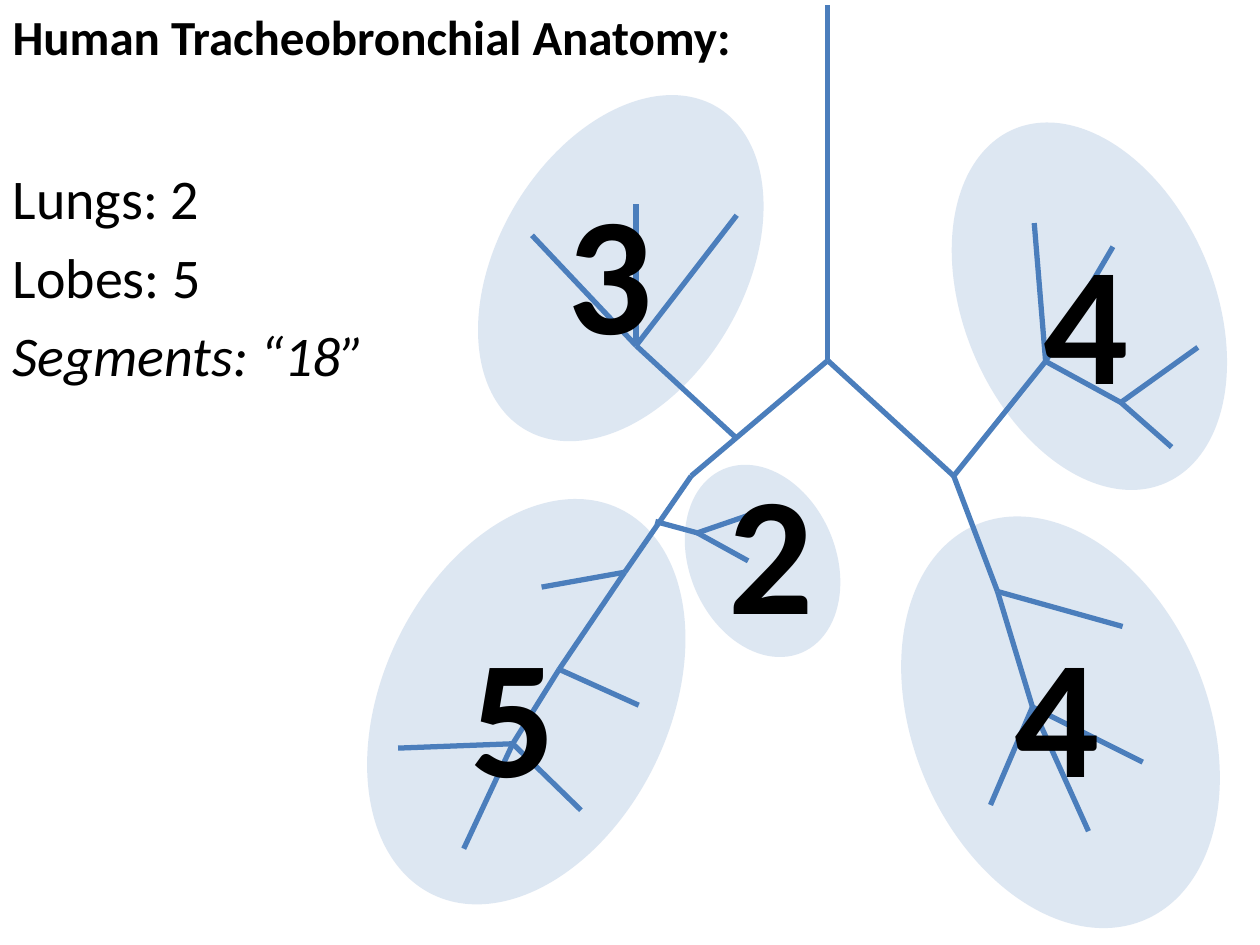
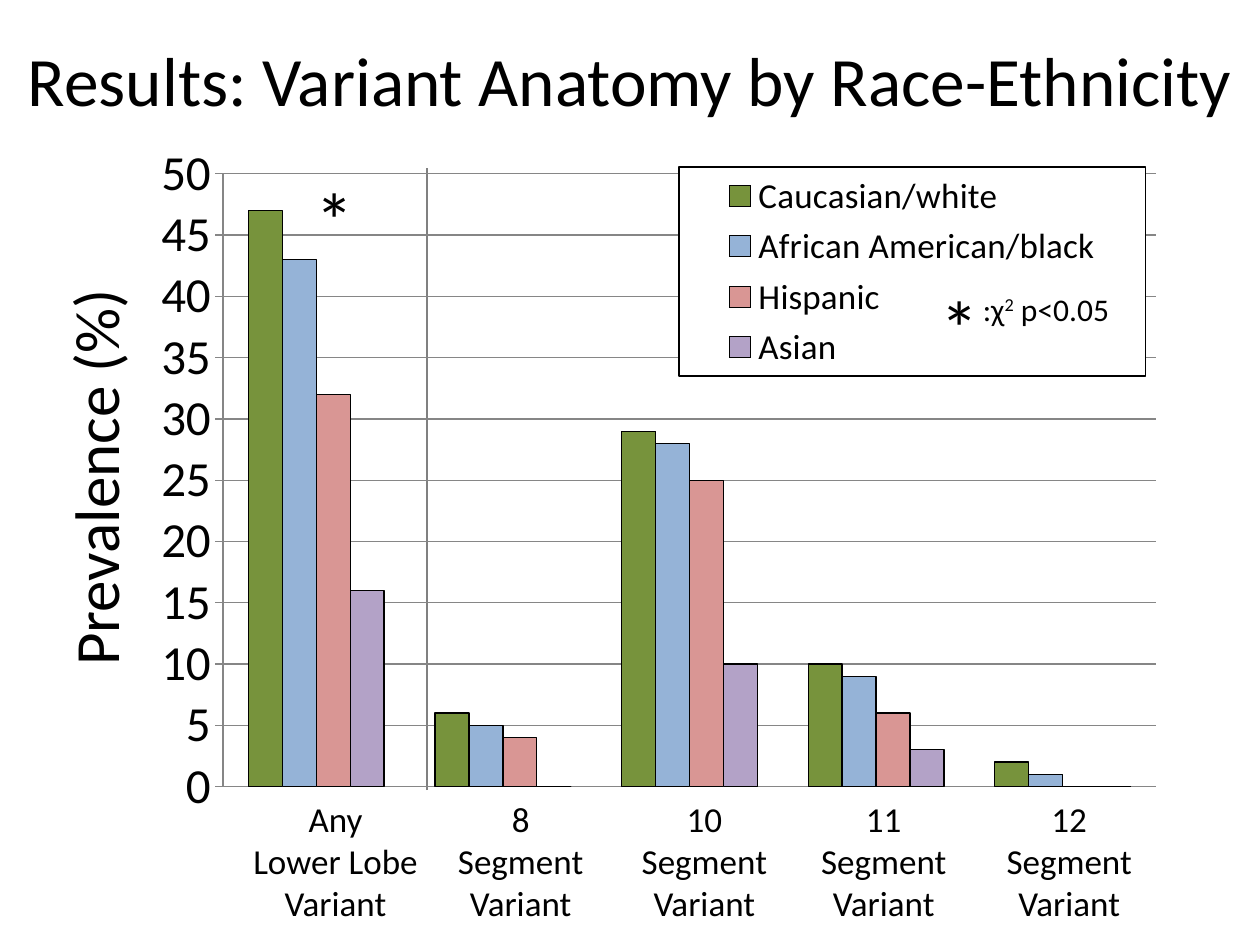
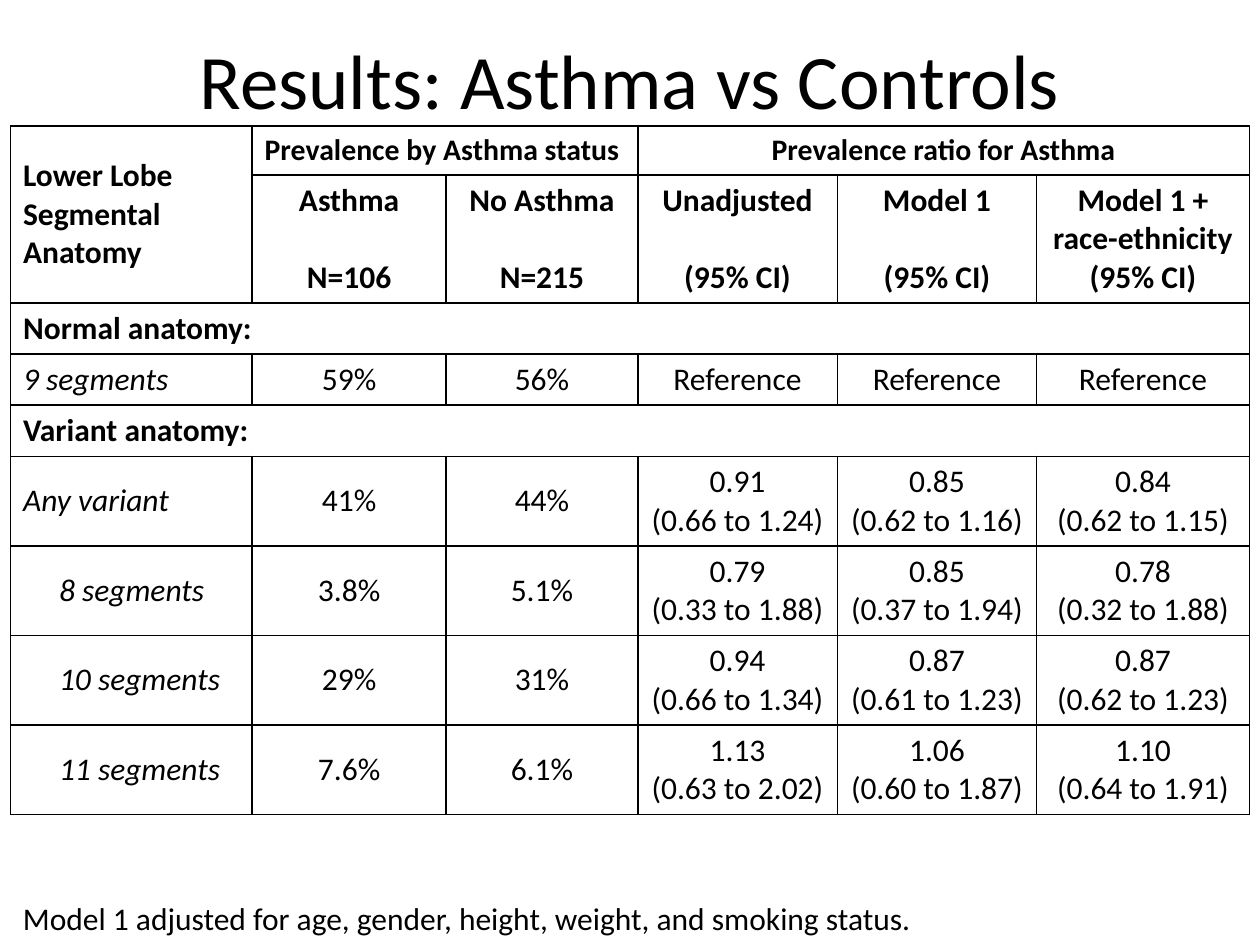
"""Build three slides on tracheobronchial anatomy and its variants."""
import lxml.etree
import pptx
import pptx.chart.data
import pptx.dml.color
import pptx.enum.chart
import pptx.enum.shapes
import pptx.enum.text
import pptx.oxml
import pptx.oxml.ns
import pptx.util

Pt = pptx.util.Pt
qn = pptx.oxml.ns.qn
ALIGN = pptx.enum.text.PP_ALIGN
ANCHOR = pptx.enum.text.MSO_ANCHOR

FONT = "Calibri"
COLORS = {
    "text": "000000", "lobe": "4F81BD", "airway": "4B7EBC", "grid": "868686",
    "divider": "808080", "paper": "FFFFFF", "white": "77933C", "black": "95B3D7",
    "hispanic": "D99694", "asian": "B3A2C7",
}
LOBE_ALPHA = 19

COUNTS = [("Lungs: 2", False), ("Lobes: 5", False), ("Segments: “18”", True)]
LOBES = [
    (284.5, 46, 140.5, 214.5, 30.8),
    (551, 65, 143, 220, 336.9),
    (219, 278.5, 163.5, 245, 25.9),
    (394, 263.5, 83.5, 114, 336.9),
    (522, 290, 168, 245.5, 336.9),
]
LOBE_NUMBERS = [("3", 317.5, 91.5), ("2", 409.5, 251.5), ("5", 262, 345),
                ("4", 589, 120), ("4", 572.5, 345)]
JUNCTIONS = {
    "trachea": (473, 3), "carina": (473, 206),
    "right upper origin": (421, 250.5), "right upper": (363.5, 197.5),
    "right bend": (395, 272), "middle origin": (374.5, 298), "middle": (398.5, 304.5),
    "right lower": (357, 327), "right basal": (319.5, 382.5), "right end": (293, 425),
    "left main": (545, 272), "left upper": (597.5, 206.5), "lingula": (640.5, 230),
    "left lower": (570, 338), "left basal": (590, 404),
}
BRANCHES = {
    "trachea": ["carina"],
    "carina": ["right bend", "left main"],
    "right upper origin": ["right upper"],
    "right upper": [(421, 123), (363.5, 116.5), (304, 134.5)],
    "right bend": ["right lower"],
    "middle origin": ["middle"],
    "middle": [(433.5, 292.5), (427.5, 320.5)],
    "right lower": [(309.5, 335.5), "right basal"],
    "right basal": [(365, 403), "right end"],
    "right end": [(227.5, 427.5), (265, 485), (332, 463)],
    "left main": ["left upper", "left lower"],
    "left upper": [(636, 141), (591, 127.5), "lingula"],
    "lingula": [(684.5, 198.5), (669.5, 255.5)],
    "left lower": [(641.5, 358), "left basal"],
    "left basal": [(566, 460), (622, 475), (653, 435.5)],
}

CATEGORIES = ["1", "2", "3", "4", "5"]
SERIES = [
    ("Caucasian/white", [47, 6, 29, 10, 2], "white"),
    ("African American/black", [43, 5, 28, 9, 1], "black"),
    ("Hispanic", [32, 4, 25, 6, 0], "hispanic"),
    ("Asian", [16, 0, 10, 3, 0], "asian"),
]
CATEGORY_LABELS = [
    ("Any\nLower Lobe\nVariant", 137, 109.5),
    ("8\nSegment\nVariant", 254, 87),
    ("10\nSegment\nVariant", 359, 87),
    ("11\nSegment\nVariant", 461.5, 87),
    ("12\nSegment\nVariant", 567.5, 87),
]
PLOT_AREA = (0.08, 0.06, 0.9, 0.88)
LEGEND_AREA = (0.52, 0.05, 0.45, 0.3)

COLUMN_WIDTHS = [138, 111, 109.5, 114, 114, 121.5]
ROW_HEIGHTS = [24.5, 64, 26, 26, 26, 44.5, 44.5, 44.5, 44.5]
MERGES = [((0, 0), (1, 0)), ((0, 1), (0, 2)), ((0, 3), (0, 5)),
          ((2, 0), (2, 5)), ((4, 0), (4, 5))]
HEADER_ROWS = 2
SUBGROUP_START = 6
TABLE = [
    ["Lower Lobe Segmental Anatomy", "Prevalence by Asthma status", "",
     "Prevalence ratio for Asthma", "", ""],
    ["", "Asthma\nN=106", "No Asthma\nN=215", "Unadjusted\n(95% CI)",
     "Model 1\n(95% CI)", "Model 1 + race-ethnicity\n(95% CI)"],
    ["Normal anatomy:"],
    ["9 segments", "59%", "56%", "Reference", "Reference", "Reference"],
    ["Variant anatomy:"],
    ["Any variant", "41%", "44%", "0.91\n(0.66 to 1.24)",
     "0.85\n(0.62 to 1.16)", "0.84\n(0.62 to 1.15)"],
    ["8 segments", "3.8%", "5.1%", "0.79\n(0.33 to 1.88)",
     "0.85\n(0.37 to 1.94)", "0.78\n(0.32 to 1.88)"],
    ["10 segments", "29%", "31%", "0.94\n(0.66 to 1.34)",
     "0.87\n(0.61 to 1.23)", "0.87\n(0.62 to 1.23)"],
    ["11 segments", "7.6%", "6.1%", "1.13\n(0.63 to 2.02)",
     "1.06\n(0.60 to 1.87)", "1.10\n(0.64 to 1.91)"],
]


def rgb(name):
    return pptx.dml.color.RGBColor.from_string(COLORS[name])


def style_font(font, size, bold=False, italic=False):
    font.name, font.size, font.bold, font.italic = FONT, Pt(size), bold, italic
    font.color.rgb = rgb("text")


def write_text(frame, text, size=18, bold=False, italic=False, align=ALIGN.LEFT, last_gap=0):
    """Write one paragraph per line; text between carets is superscript."""
    lines = text.split("\n")
    for number, line in enumerate(lines):
        paragraph = frame.add_paragraph() if number else frame.paragraphs[0]
        paragraph.alignment = align
        for position, piece in enumerate(line.split("^")):
            run = paragraph.add_run()
            run.text = piece
            style_font(run.font, size, bold, italic)
            if position % 2:
                run.font._element.set("baseline", "30000")
    if last_gap:
        paragraph.space_before = Pt(last_gap)


def place(shape, left, top, width, height):
    shape.left, shape.top, shape.width, shape.height = map(Pt, (left, top, width, height))


def add_label(slide, text, box, **text_format):
    shape = slide.shapes.add_textbox(*map(Pt, box))
    shape.text_frame.word_wrap = False
    shape.text_frame.auto_size = pptx.enum.text.MSO_AUTO_SIZE.SHAPE_TO_FIT_TEXT
    write_text(shape.text_frame, text, **text_format)
    return shape


def set_title(slide, text, box, **text_format):
    title = slide.shapes.title
    place(title, *box)
    title.text_frame.auto_size = pptx.enum.text.MSO_AUTO_SIZE.NONE
    title.text_frame.vertical_anchor = ANCHOR.MIDDLE
    write_text(title.text_frame, text, **text_format)


def add_line(slide, start, end, color, width):
    line = slide.shapes.add_connector(
        pptx.enum.shapes.MSO_CONNECTOR.STRAIGHT, *map(Pt, (*start, *end)))
    line.line.color.rgb = rgb(color)
    line.line.width = Pt(width)
    lxml.etree.SubElement(line._element.spPr, qn("a:effectLst"))


def add_lobe(slide, left, top, width, height, rotation):
    lobe = slide.shapes.add_shape(
        pptx.enum.shapes.MSO_SHAPE.OVAL, *map(Pt, (left, top, width, height)))
    lobe.rotation = rotation
    lobe.shadow.inherit = False
    lobe.line.fill.background()
    lobe.fill.solid()
    lobe.fill.fore_color.rgb = rgb("lobe")
    color = lobe._element.spPr.find(".//" + qn("a:srgbClr"))
    lxml.etree.SubElement(color, qn("a:alpha"), val=str(LOBE_ALPHA * 1000))


def build_anatomy(presentation):
    slide = presentation.slides.add_slide(presentation.slide_layouts[1])
    set_title(slide, "Human Tracheobronchial Anatomy:", (0, 0, 430, 41), size=28, bold=True)

    body = slide.placeholders[1]
    place(body, 0, 90, 217.5, 140)
    frame = body.text_frame
    frame.auto_size = pptx.enum.text.MSO_AUTO_SIZE.NONE
    write_text(frame, "\n".join(text for text, _ in COUNTS), size=32)
    for paragraph, (_, italic) in zip(frame.paragraphs, COUNTS):
        paragraph.space_before, paragraph.space_after = Pt(0), Pt(6.5)
        paragraph.runs[0].font.italic = italic
        properties = paragraph._element.get_or_add_pPr()
        properties.set("marL", "0")
        properties.set("indent", "0")
        lxml.etree.SubElement(properties, qn("a:buNone"))

    for lobe in LOBES:
        add_lobe(slide, *lobe)
    for start, ends in BRANCHES.items():
        for end in ends:
            add_line(slide, JUNCTIONS[start], JUNCTIONS.get(end, end), "airway", 3)
    for number, left, top in LOBE_NUMBERS:
        add_label(slide, number, (left, top, 63.5, 124), size=96, bold=True)


def manual_layout(area, inner=False):
    layout = lxml.etree.Element(qn("c:layout"))
    manual = lxml.etree.SubElement(layout, qn("c:manualLayout"))
    settings = [("layoutTarget", "inner")] if inner else []
    settings += [("xMode", "edge"), ("yMode", "edge"), *zip("xywh", area)]
    for name, value in settings:
        lxml.etree.SubElement(manual, qn("c:" + name), val=str(value))
    return layout


def style_legend(chart):
    chart.has_legend = True
    style_font(chart.legend.font, 20)
    element = chart.legend._element
    for child in list(element):
        if child.tag != qn("c:txPr"):
            element.remove(child)
    box = pptx.oxml.parse_xml(
        f'<c:spPr {pptx.oxml.ns.nsdecls("c", "a")}>'
        f'<a:solidFill><a:srgbClr val="{COLORS["paper"]}"/></a:solidFill>'
        f'<a:ln w="9525"><a:solidFill><a:srgbClr val="{COLORS["text"]}"/></a:solidFill></a:ln>'
        '</c:spPr>')
    element[:0] = [
        lxml.etree.Element(qn("c:legendPos"), val="r"),
        manual_layout(LEGEND_AREA),
        lxml.etree.Element(qn("c:overlay"), val="1"),
        box,
    ]


def add_prevalence_chart(slide):
    data = pptx.chart.data.CategoryChartData()
    data.categories = CATEGORIES
    for name, values, _ in SERIES:
        data.add_series(name, values)
    chart = slide.shapes.add_chart(
        pptx.enum.chart.XL_CHART_TYPE.COLUMN_CLUSTERED,
        *map(Pt, (80, 75.5, 592.5, 398)), data).chart
    style_font(chart.font, 10)
    chart.has_title = False

    plot = chart.plots[0]
    plot.vary_by_categories = False
    plot.gap_width, plot.overlap = 150, 0
    for series, (_, _, color) in zip(plot.series, SERIES):
        series.invert_if_negative = False
        series.format.fill.solid()
        series.format.fill.fore_color.rgb = rgb(color)
        series.format.line.color.rgb = rgb("text")
        series.format.line.width = Pt(0.75)

    chart.category_axis.visible = False
    axis = chart.value_axis
    axis.minimum_scale, axis.maximum_scale, axis.major_unit = 0, 50, 5
    axis.major_tick_mark = pptx.enum.chart.XL_TICK_MARK.CROSS
    axis.has_major_gridlines = True
    style_font(axis.tick_labels.font, 28)
    for line in (axis.format.line, axis.major_gridlines.format.line):
        line.color.rgb = rgb("grid")
        line.width = Pt(0.75)

    style_legend(chart)
    plot_area = chart._chartSpace.find(".//" + qn("c:plotArea"))
    for layout in plot_area.findall(qn("c:layout")):
        plot_area.remove(layout)
    plot_area.insert(0, manual_layout(PLOT_AREA, inner=True))


def build_race_results(presentation):
    slide = presentation.slides.add_slide(presentation.slide_layouts[5])
    set_title(slide, "Results: Variant Anatomy by Race-Ethnicity", (0, 0, 720, 90),
              size=39.6, align=ALIGN.CENTER)
    for text, left, width in CATEGORY_LABELS:
        add_label(slide, text, (left, 452, width, 80), size=20, align=ALIGN.CENTER)
    axis_title = add_label(slide, "Prevalence (%)", (-62, 246, 232, 51), size=36)
    axis_title.rotation = 270
    add_line(slide, (244, 451.5), (244, 96), "divider", 0.75)
    add_prevalence_chart(slide)
    for left, top in [(173, 94.5), (530.5, 156)]:
        add_label(slide, "*", (left, top, 36.5, 60.5), size=44)
    add_label(slide, ":χ^2^ p<0.05", (554.5, 162, 88.5, 29), size=18)


def add_borders(cell):
    properties = cell._tc.get_or_add_tcPr()
    for position, side in enumerate("LRTB"):
        properties.insert(position, pptx.oxml.parse_xml(
            f'<a:ln{side} {pptx.oxml.ns.nsdecls("a")} w="12700"><a:solidFill>'
            f'<a:srgbClr val="{COLORS["text"]}"/></a:solidFill></a:ln{side}>'))


def fill_cell(cell, text, row, column):
    header = row < HEADER_ROWS
    section = len(TABLE[row]) == 1
    left_aligned = column == 0 or (row, column) == (0, 1)
    spaced = header and "\n" in text and "race" not in text
    write_text(cell.text_frame, text,
               size=17 if row == 0 and column else 18,
               bold=header or section,
               italic=column == 0 and not header and not section,
               align=ALIGN.LEFT if left_aligned else ALIGN.CENTER,
               last_gap=22 if spaced else 0)
    if column == 0 and row >= SUBGROUP_START:
        cell.margin_left = Pt(27.75)


def build_asthma_results(presentation):
    slide = presentation.slides.add_slide(presentation.slide_layouts[5])
    set_title(slide, "Results: Asthma vs Controls", (36, 0, 648, 90),
              size=44, align=ALIGN.CENTER)
    table = slide.shapes.add_table(
        len(ROW_HEIGHTS), len(COLUMN_WIDTHS),
        *map(Pt, (6, 72, sum(COLUMN_WIDTHS), sum(ROW_HEIGHTS)))).table
    table.first_row = table.horz_banding = False
    for column, width in zip(table.columns, COLUMN_WIDTHS):
        column.width = Pt(width)
    for row, height in zip(table.rows, ROW_HEIGHTS):
        row.height = Pt(height)
    for first, last in MERGES:
        table.cell(*first).merge(table.cell(*last))
    for cell in table.iter_cells():
        cell.vertical_anchor = ANCHOR.MIDDLE
        cell.fill.background()
        add_borders(cell)
    for row, texts in enumerate(TABLE):
        for column, text in enumerate(texts):
            if text:
                fill_cell(table.cell(row, column), text, row, column)
    add_label(slide, "Model 1 adjusted for age, gender, height, weight, and smoking status.",
              (6, 510, 528.5, 29), size=18)


def main():
    presentation = pptx.Presentation()
    presentation.slide_width, presentation.slide_height = Pt(720), Pt(540)
    build_anatomy(presentation)
    build_race_results(presentation)
    build_asthma_results(presentation)
    presentation.save("out.pptx")


if __name__ == "__main__":
    main()
